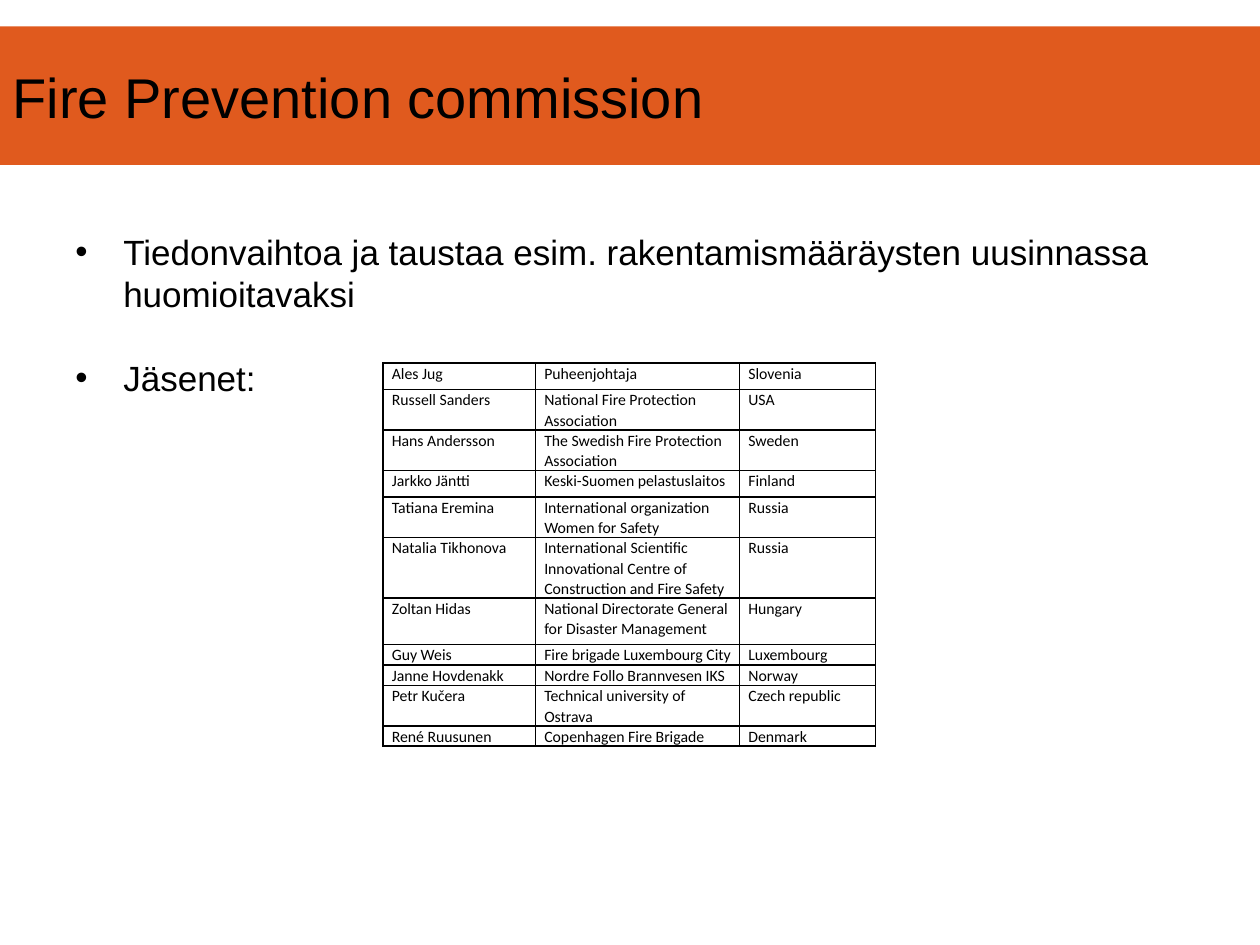
from lxml.etree import SubElement
from pptx import Presentation
from pptx.dml.color import RGBColor
from pptx.enum.text import MSO_ANCHOR, PP_ALIGN
from pptx.oxml.ns import qn
from pptx.util import Inches, Pt

ORANGE = RGBColor(0xE0, 0x5A, 0x1E)
BLACK = RGBColor(0, 0, 0)

# Content
TITLE = "Fire Prevention commission"
BULLETS = [
    "Tiedonvaihtoa ja taustaa esim. rakentamismääräysten uusinnassa huomioitavaksi",
    "Jäsenet:",
]
# Row height, then name, organisation and country
MEMBERS = [
    (0.21, "Ales Jug", "Puheenjohtaja", "Slovenia"),
    (0.21, "Russell Sanders", "National Fire Protection Association", "USA"),
    (0.21, "Hans Andersson", "The Swedish Fire Protection Association", "Sweden"),
    (0.21, "Jarkko Jäntti", "Keski-Suomen pelastuslaitos", "Finland"),
    (0.21, "Tatiana Eremina", "International organization Women for Safety", "Russia"),
    (0.44, "Natalia Tikhonova",
     "International Scientific Innovational Centre of Construction and Fire Safety", "Russia"),
    (0.37, "Zoltan Hidas", "National Directorate General for Disaster Management", "Hungary"),
    (0.14, "Guy Weis", "Fire brigade Luxembourg City", "Luxembourg"),
    (0.14, "Janne Hovdenakk", "Nordre Follo Brannvesen IKS", "Norway"),
    (0.14, "Petr Kučera", "Technical university of Ostrava", "Czech republic"),
    (0.14, "René Ruusunen", "Copenhagen Fire Brigade", "Denmark"),
]
COL_WIDTHS = [1.21, 1.62, 1.08]


def add_run(p, text, size, font):
    r = p.add_run()
    r.text = text
    r.font.size = Pt(size)
    r.font.name = font
    r.font.color.rgb = BLACK


def set_bullet(p, indent):
    pPr = p._p.get_or_add_pPr()
    pPr.set("marL", str(indent))
    pPr.set("indent", str(-indent))
    SubElement(pPr, qn("a:buFont"), typeface="Arial")
    SubElement(pPr, qn("a:buChar"), char="•")


def set_borders(cell):
    tcPr = cell._tc.get_or_add_tcPr()
    for side in ("lnL", "lnR", "lnT", "lnB"):
        ln = SubElement(tcPr, qn(f"a:{side}"), w=str(Pt(1)))
        fill = SubElement(ln, qn("a:solidFill"))
        SubElement(fill, qn("a:srgbClr"), val=str(BLACK))


prs = Presentation()
prs.slide_width, prs.slide_height = Inches(10), Inches(7.5)
s = prs.slides.add_slide(prs.slide_layouts[5])

# Title band
title = s.shapes.title
title.left, title.top = Inches(0), Inches(0.21)
title.width, title.height = Inches(10), Inches(1.1)
title.fill.solid()
title.fill.fore_color.rgb = ORANGE
tf = title.text_frame
tf.vertical_anchor = MSO_ANCHOR.MIDDLE
p = tf.paragraphs[0]
p.alignment = PP_ALIGN.LEFT
add_run(p, TITLE, 32, "Arial")

# Bullets
tf = s.shapes.add_textbox(Inches(0.5), Inches(1.78), Inches(8.99), Inches(0.94)).text_frame
tf.word_wrap = True
for i, text in enumerate(BULLETS):
    p = tf.add_paragraph() if i else tf.paragraphs[0]
    set_bullet(p, Inches(0.38))
    if i:
        p.space_before = Pt(24)
    add_run(p, text, 20, "Arial")

# Member table
table = s.shapes.add_table(len(MEMBERS), len(COL_WIDTHS), Inches(3.04), Inches(2.88),
                           Inches(sum(COL_WIDTHS)), Inches(3.2)).table
table.first_row = table.horz_banding = False
for col, width in zip(table.columns, COL_WIDTHS):
    col.width = Inches(width)
for row, (height, *texts) in zip(table.rows, MEMBERS):
    row.height = Inches(height)
    for cell, text in zip(row.cells, texts):
        cell.margin_left = cell.margin_right = Inches(0.07)
        cell.margin_top = cell.margin_bottom = 0
        set_borders(cell)
        cell.fill.background()
        p = cell.text_frame.paragraphs[0]
        p.line_spacing = 1.07
        add_run(p, text, 9, "Calibri")

prs.save("out.pptx")
